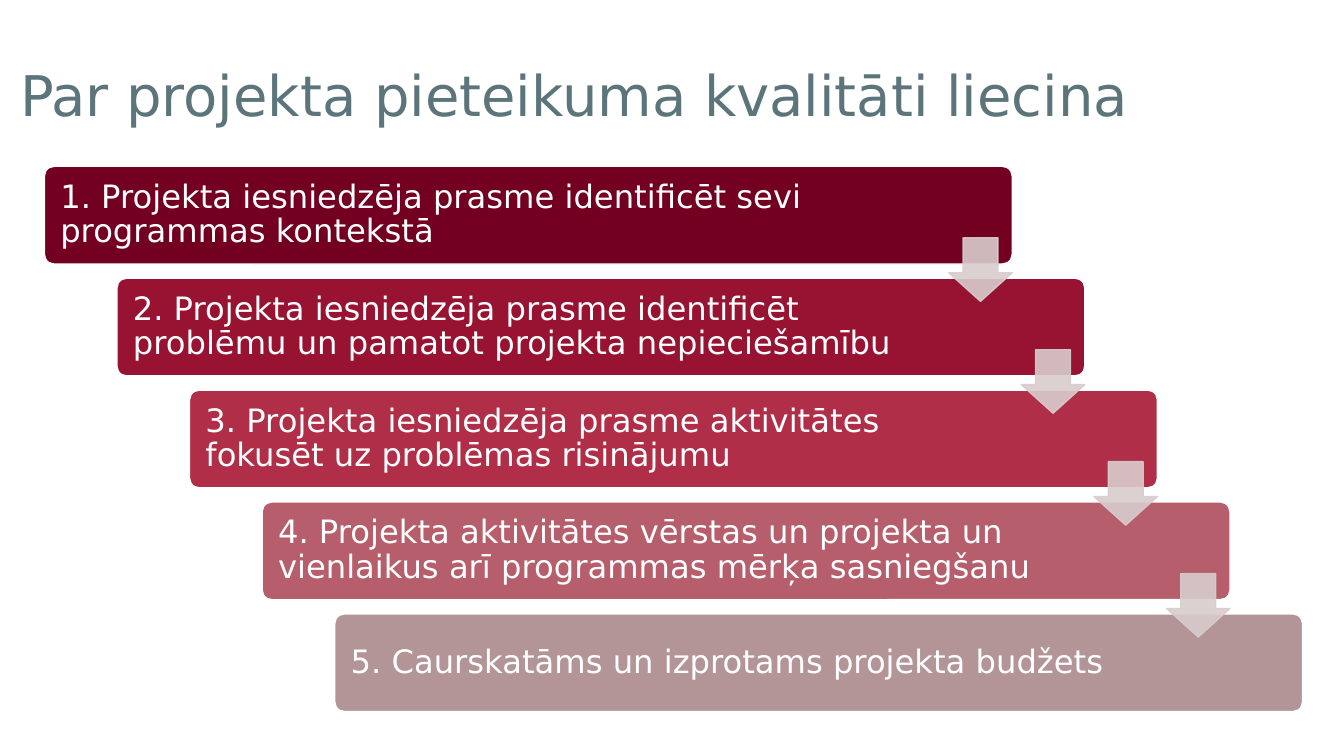
import pptx
import pptx.util
import pptx.dml.color
import pptx.enum.shapes
import pptx.enum.text
import pptx.oxml.ns
from lxml import etree

TITLE = "Par projekta pieteikuma kvalitāti liecina"
STEPS = [
    ("1. Projekta iesniedzēja prasme identificēt sevi programmas kontekstā", "step1"),
    ("2. Projekta iesniedzēja prasme identificēt problēmu un pamatot projekta nepieciešamību", "step2"),
    ("3. Projekta iesniedzēja prasme aktivitātes fokusēt uz problēmas risinājumu", "step3"),
    ("4. Projekta aktivitātes vērstas un projekta un vienlaikus arī programmas mērķa sasniegšanu", "step4"),
    ("5. Caurskatāms un izprotams projekta budžets", "step5"),
]
COLORS = {
    "title": "5B757A", "white": "FFFFFF", "arrow": "D8CCCD",
    "step1": "740021", "step2": "981231", "step3": "B02E47",
    "step4": "B65E6B", "step5": "B39598",
}
FONT = "DejaVu Sans"

# Staircase grid, in inches
STAIR_LEFT, STAIR_TOP = 0.44, 1.65
STEP_X, STEP_Y = 0.72, 1.11
BAR_W, BAR_H = 9.6, 0.97
ARROW = 0.63
ARROW_DX, ARROW_DY = BAR_W - ARROW, 0.71
ARROW_OPACITY = 90

Inches, Pt = pptx.util.Inches, pptx.util.Pt
SHAPES = pptx.enum.shapes.MSO_SHAPE


def rgb(name):
    return pptx.dml.color.RGBColor.from_string(COLORS[name])


def write(shape, text, size, color, insets):
    frame = shape.text_frame
    frame.word_wrap = True
    frame.vertical_anchor = pptx.enum.text.MSO_ANCHOR.MIDDLE
    (frame.margin_left, frame.margin_top,
     frame.margin_right, frame.margin_bottom) = map(Inches, insets)
    frame.text = text
    paragraph = frame.paragraphs[0]
    paragraph.alignment = pptx.enum.text.PP_ALIGN.LEFT
    paragraph.line_spacing = 0.9
    font = paragraph.runs[0].font
    font.name, font.size = FONT, Pt(size)
    font.color.rgb = rgb(color)


def add_block(kind, left, top, width, height, adjustments, fill, line):
    block = slide.shapes.add_shape(kind, *map(Inches, (left, top, width, height)))
    block.shadow.inherit = False
    for index, value in enumerate(adjustments):
        block.adjustments[index] = value
    block.fill.solid()
    block.fill.fore_color.rgb = rgb(fill)
    block.line.color.rgb = rgb(line)
    block.line.width = Pt(1)
    return block


def set_opacity(shape, percent):
    qn = pptx.oxml.ns.qn
    for color in shape.fill._xPr.iter(qn("a:srgbClr")):
        etree.SubElement(color, qn("a:alpha")).set("val", str(percent * 1000))


prs = pptx.Presentation()
prs.slide_width, prs.slide_height = Inches(13.33), Inches(7.5)
slide = prs.slides.add_slide(prs.slide_layouts[6])

# Title
title = slide.shapes.add_textbox(0, Inches(0.38), Inches(11.97), Inches(1.19))
write(title, TITLE, 40, "title", (0.2, 0.2, 0.2, 0.2))

# Bars, each one step lower and further right
for row, (text, color) in enumerate(STEPS):
    bar = add_block(SHAPES.ROUNDED_RECTANGLE, STAIR_LEFT + row * STEP_X,
                    STAIR_TOP + row * STEP_Y, BAR_W, BAR_H, [0.1], color, "white")
    write(bar, text, 23, "white", (0.13, 0.1, 1.48, 0.1))

# Arrows bridging each bar to the next
for row in range(len(STEPS) - 1):
    arrow = add_block(SHAPES.DOWN_ARROW, STAIR_LEFT + ARROW_DX + row * STEP_X,
                      STAIR_TOP + ARROW_DY + row * STEP_Y, ARROW, ARROW,
                      [0.55, 0.45], "arrow", "arrow")
    set_opacity(arrow, ARROW_OPACITY)

prs.save("out.pptx")
